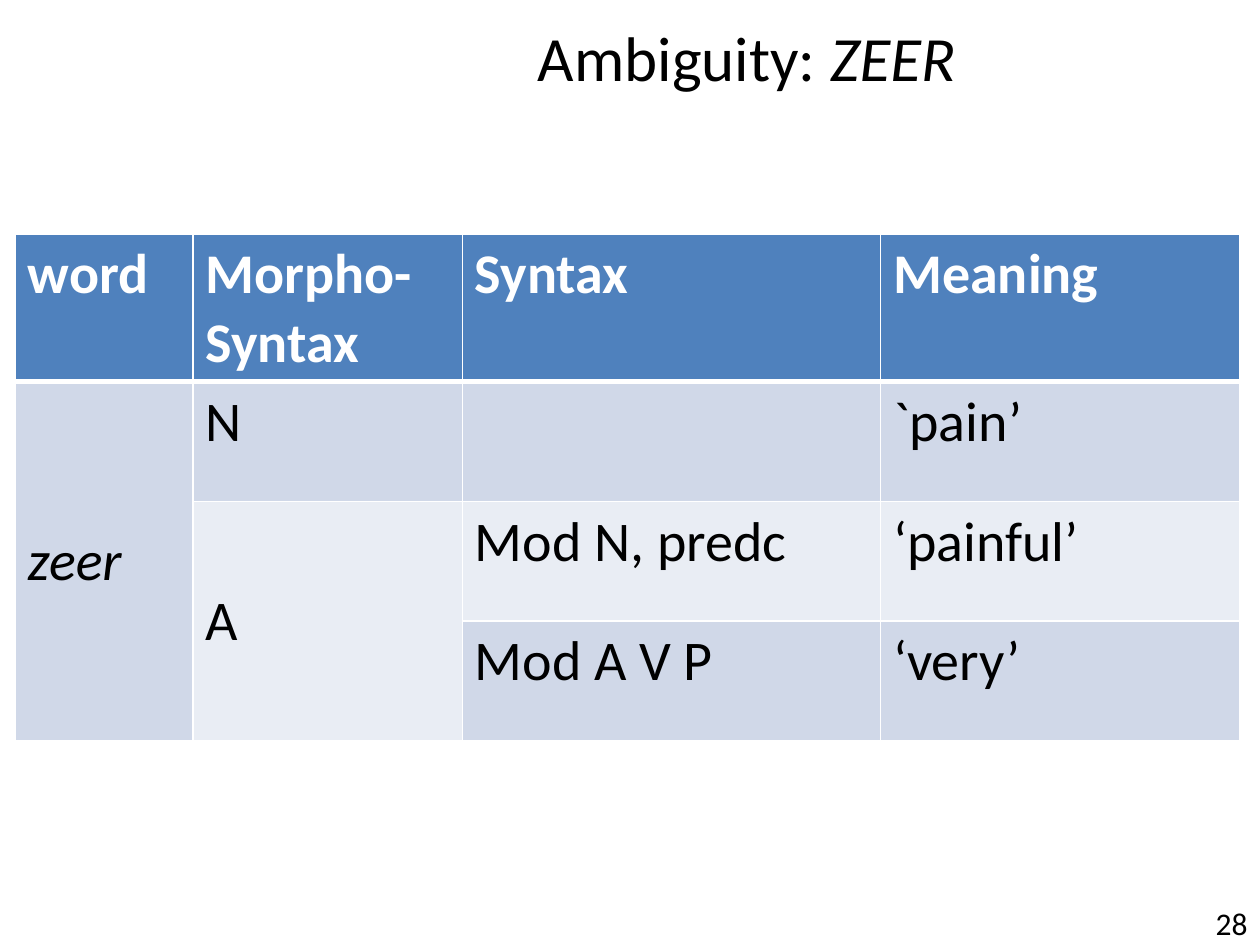
import pptx
import pptx.util
import pptx.dml.color
import pptx.enum.text
import pptx.oxml.ns
import lxml.etree

WIDTH, HEIGHT = 10, 7.5
FONT = "Calibri"
COLORS = {
    "text": "000000",
    "white": "FFFFFF",
    "header": "4F81BD",
    "band_dark": "D0D8E8",
    "band_light": "E9EDF4",
}
ALIGN = pptx.enum.text.PP_ALIGN
ANCHOR = pptx.enum.text.MSO_ANCHOR

COLUMN_WIDTHS = [1.41, 2.14, 3.32, 2.85]
ROW_HEIGHTS = [1.17, 0.95, 0.95, 0.95]
ROW_FILLS = ["header", "band_dark", "band_light", "band_dark"]
# Each cell is a list of lines; an empty list is a blank or merged cell
CELLS = [
    [["word"], ["Morpho-", "Syntax"], ["Syntax"], ["Meaning"]],
    [["zeer"], ["N"], [], ["`pain’"]],
    [[], ["A"], ["Mod N, predc"], ["‘painful’"]],
    [[], [], ["Mod A V P"], ["‘very’"]],
]
# Top cell and bottom cell of each vertical merge
MERGES = [((1, 0), (3, 0)), ((2, 1), (3, 1))]


def rgb(name):
    return pptx.dml.color.RGBColor.from_string(COLORS[name])


def add_span(para, text, size=32, color="text", bold=False, italic=False):
    span = para.add_run()
    span.text = text
    span.font.name = FONT
    span.font.size = pptx.util.Pt(size)
    span.font.bold = bold
    span.font.italic = italic
    span.font.color.rgb = rgb(color)


def add_text(page, left, top, width, height, spans, align, anchor, size):
    """Place a one-paragraph box; the position is in shares of the slide."""
    box = page.shapes.add_textbox(
        pptx.util.Inches(left * WIDTH), pptx.util.Inches(top * HEIGHT),
        pptx.util.Inches(width * WIDTH), pptx.util.Inches(height * HEIGHT))
    frame = box.text_frame
    frame.word_wrap = True
    frame.vertical_anchor = anchor
    para = frame.paragraphs[0]
    para.alignment = align
    for text, italic in spans:
        add_span(para, text, size=size, italic=italic)


def set_border(cell, side, points):
    line = lxml.etree.SubElement(
        cell._tc.get_or_add_tcPr(), pptx.oxml.ns.qn("a:ln" + side),
        w=str(pptx.util.Pt(points)))
    fill = lxml.etree.SubElement(line, pptx.oxml.ns.qn("a:solidFill"))
    lxml.etree.SubElement(
        fill, pptx.oxml.ns.qn("a:srgbClr"), val=COLORS["white"])


def fill_cell(cell, lines, row, fill):
    header = row == 0
    # Borders go before the fill; a thick rule closes the header
    for side, edge_row in (("L", None), ("R", None), ("T", 1), ("B", 0)):
        set_border(cell, side, 3 if row == edge_row else 1)
    cell.fill.solid()
    cell.fill.fore_color.rgb = rgb(fill)
    for index, text in enumerate(lines):
        frame = cell.text_frame
        para = frame.add_paragraph() if index else frame.paragraphs[0]
        add_span(para, text, color="white" if header else "text",
                 bold=header, italic=text == "zeer")


def add_word_table(page, left, top):
    table = page.shapes.add_table(
        len(ROW_HEIGHTS), len(COLUMN_WIDTHS),
        pptx.util.Inches(left), pptx.util.Inches(top),
        pptx.util.Inches(sum(COLUMN_WIDTHS)),
        pptx.util.Inches(sum(ROW_HEIGHTS))).table
    for column, width in zip(table.columns, COLUMN_WIDTHS):
        column.width = pptx.util.Inches(width)
    for row, height in zip(table.rows, ROW_HEIGHTS):
        row.height = pptx.util.Inches(height)
    for row, (texts, fill) in enumerate(zip(CELLS, ROW_FILLS)):
        for column, lines in enumerate(texts):
            fill_cell(table.cell(row, column), lines, row, fill)
    for first, last in MERGES:
        table.cell(*first).merge(table.cell(*last))
        table.cell(*first).vertical_anchor = ANCHOR.MIDDLE


def main():
    deck = pptx.Presentation()
    deck.slide_width = pptx.util.Inches(WIDTH)
    deck.slide_height = pptx.util.Inches(HEIGHT)
    page = deck.slides.add_slide(deck.slide_layouts[6])

    # Title
    add_text(page, 0.185, 0, 0.815, 0.12,
             [("Ambiguity: ", False), ("ZEER", True)],
             ALIGN.CENTER, ANCHOR.MIDDLE, size=36)
    # Readings of the word
    add_word_table(page, 0.12, 1.86)
    # Page number
    add_text(page, 0.89, 0.95, 0.11, 0.05, [("28", False)],
             ALIGN.RIGHT, ANCHOR.TOP, size=18)

    deck.save("out.pptx")


if __name__ == "__main__":
    main()
